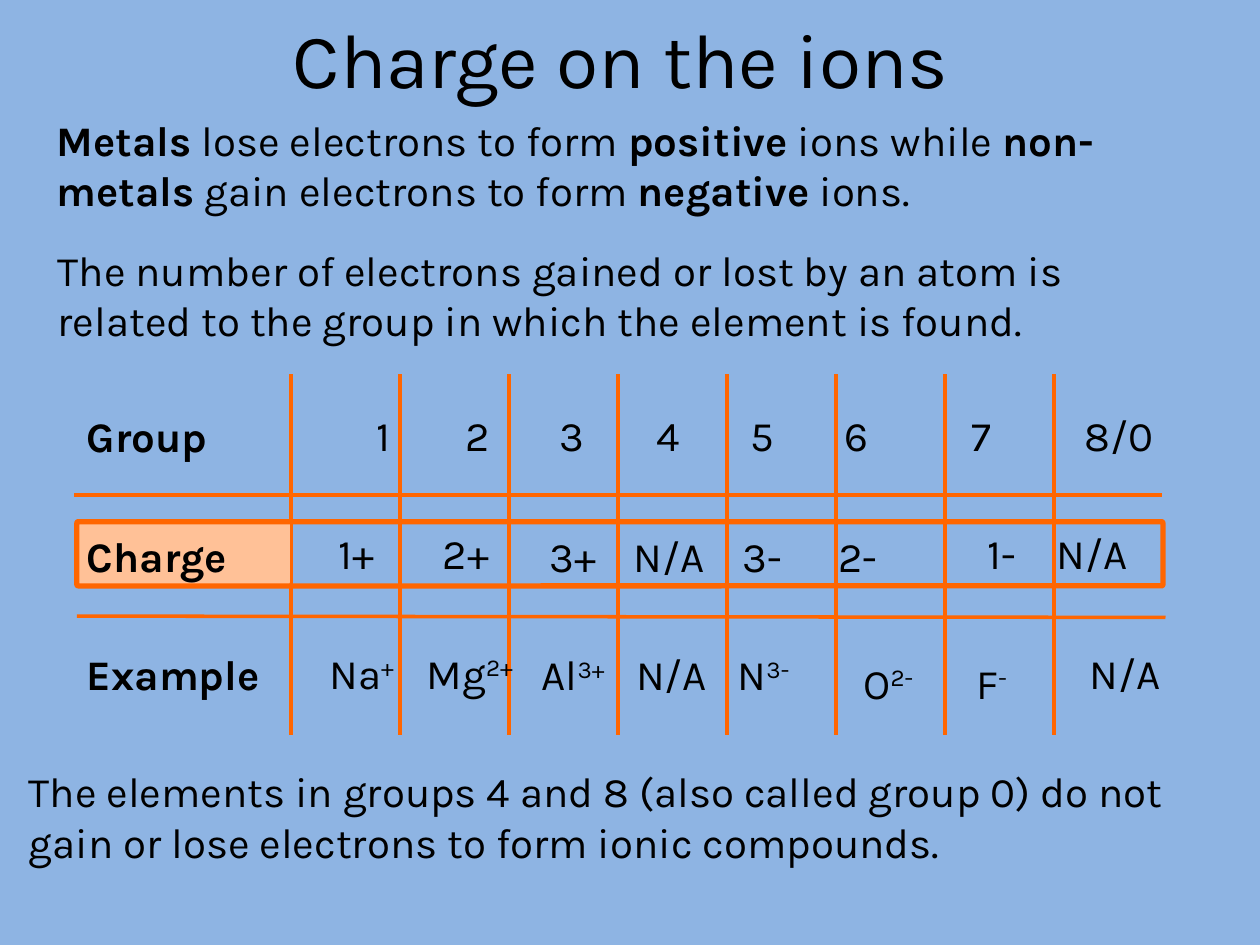
"""Builds a slide about the charge on ions by group of the periodic table."""
from lxml import etree
from pptx import Presentation
from pptx.dml.color import RGBColor
from pptx.enum.shapes import MSO_CONNECTOR, MSO_SHAPE
from pptx.enum.text import MSO_ANCHOR, PP_ALIGN
from pptx.oxml.ns import qn
from pptx.util import Inches, Pt

color = RGBColor.from_string
ORANGE = "FF6600"

deck = Presentation()
deck.slide_width, deck.slide_height = Inches(10), Inches(7.5)
slide = deck.slides.add_slide(deck.slide_layouts[6])
slide.background.fill.solid()
slide.background.fill.fore_color.rgb = color("8EB4E3")
shapes = slide.shapes


def write(text, left, top, width, height=0.5, align=PP_ALIGN.LEFT, size=24):
    """Adds a text box; *stars* mark bold and a caret starts a superscript."""
    box = shapes.add_textbox(Inches(left), Inches(top), Inches(width), Inches(height))
    frame = box.text_frame
    frame.word_wrap = True
    para = frame.paragraphs[0]
    para.alignment = align
    for i, part in enumerate(text.split("*")):
        for j, piece in enumerate(part.split("^")):
            if piece:
                run = para.add_run()
                run.text = piece
                run.font.name = "Karla"
                run.font.size = Pt(size)
                run.font.bold = i % 2 == 1
                run.font.color.rgb = color("000000")
                if j:
                    run.font._element.set("baseline", "30000")
    return frame


def rule(x1, y1, x2, y2):
    """Adds an orange grid line."""
    line = shapes.add_connector(MSO_CONNECTOR.STRAIGHT, Inches(x1), Inches(y1),
                                Inches(x2), Inches(y2))
    line.line.color.rgb = color(ORANGE)
    line.line.width = Pt(2)
    etree.SubElement(line._element.spPr, qn("a:effectLst"))


title = write("Charge on the ions", 0.43, 0, 9, 0.91, PP_ALIGN.CENTER, 44)
title.vertical_anchor = MSO_ANCHOR.MIDDLE
write("*Metals* lose electrons to form *positive* ions while *non-metals* "
      "gain electrons to form *negative* ions.", 0.35, 0.86, 9.29, 0.91)
write("The number of electrons gained or lost by an atom is related to the "
      "group in which the element is found.", 0.36, 1.89, 8.93, 0.91)
write("The elements in groups 4 and 8 (also called group 0) do not gain or "
      "lose electrons to form ionic compounds.", 0.13, 6.03, 9.87, 0.91)

for col in range(8):
    x = 2.31 + col * 0.865
    rule(x, 2.97, x, 5.83)

for left, top, width, height, adjust, fill in [
    (0.61, 4.13, 1.69, 0.52, 0.052, "FFC197"),
    (0.61, 4.14, 8.62, 0.51, 0.022, None),
]:
    band = shapes.add_shape(MSO_SHAPE.ROUNDED_RECTANGLE, Inches(left), Inches(top),
                            Inches(width), Inches(height))
    band.adjustments[0] = adjust
    band.shadow.inherit = False
    if fill:
        band.fill.solid()
        band.fill.fore_color.rgb = color(fill)
        band.line.fill.background()
    else:
        band.fill.background()
        band.line.color.rgb = color(ORANGE)
        band.line.width = Pt(3)

rule(0.59, 3.93, 9.22, 3.93)
rule(0.61, 4.89, 9.25, 4.9)

for label, top in [("Group", 3.21), ("Charge", 4.16), ("Example", 5.1)]:
    write(f"*{label}*", 0.59, top, 1.83)

cells = [
    ("1", 3.04, 3.2), ("2", 3.79, 3.2), ("3", 4.54, 3.2), ("4", 5.3, 3.2),
    ("5", 6.05, 3.2), ("6", 6.8, 3.2), ("7", 7.79, 3.2), ("8/0", 8.88, 3.2),
    ("1+", 2.83, 4.14), ("2+", 3.7, 4.14), ("3+", 4.55, 4.16), ("N/A", 5.31, 4.16),
    ("3-", 6.05, 4.16), ("2-", 6.81, 4.16), ("1-", 7.95, 4.14), ("N/A", 8.67, 4.14),
    ("Na^+", 2.87, 5.09), ("Mg^2+", 3.73, 5.09), ("Al^3+", 4.55, 5.1),
    ("N/A", 5.33, 5.1), ("N^3-", 6.06, 5.1), ("O^2-", 7.05, 5.17),
    ("F^-", 7.87, 5.17), ("N/A", 8.93, 5.09),
]
for text, mid, top in cells:
    width = 0.7 if len(text) < 3 else 1.07 if "Mg" in text else 0.94
    write(text, mid - width / 2, top, width, align=PP_ALIGN.CENTER)

deck.save("out.pptx")
